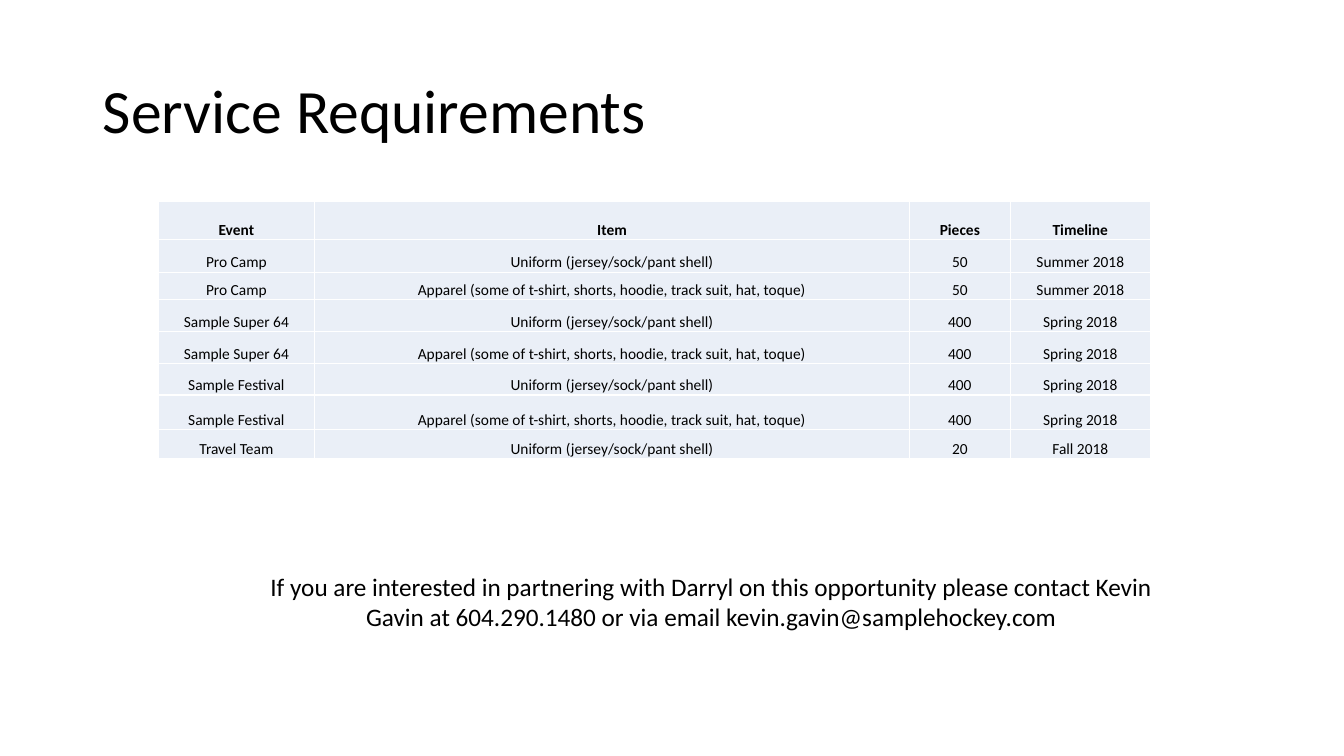
from lxml import etree
from pptx import Presentation
from pptx.dml.color import RGBColor
from pptx.enum.text import MSO_ANCHOR, PP_ALIGN
from pptx.oxml.ns import qn
from pptx.util import Inches, Pt

LEFT, CENTER = PP_ALIGN.LEFT, PP_ALIGN.CENTER
MIDDLE, BOTTOM = MSO_ANCHOR.MIDDLE, MSO_ANCHOR.BOTTOM

BLACK = RGBColor(0x00, 0x00, 0x00)
WHITE = RGBColor(0xFF, 0xFF, 0xFF)
PALE_BLUE = RGBColor(0xEA, 0xEF, 0xF7)
FONT = "Calibri"
TITLE_ONLY_LAYOUT = 5

COLUMN_WIDTHS = (1.55, 5.9, 1, 1.39)
ROW_HEIGHTS = (0.38, 0.32, 0.27, 0.32, 0.32, 0.31, 0.34, 0.29)
UNIFORM = "Uniform (jersey/sock/pant shell)"
APPAREL = "Apparel (some of t-shirt, shorts, hoodie, track suit, hat, toque)"
REQUIREMENTS = (
    ("Event", "Item", "Pieces", "Timeline"),
    ("Pro Camp", UNIFORM, "50", "Summer 2018"),
    ("Pro Camp", APPAREL, "50", "Summer 2018"),
    ("Sample Super 64", UNIFORM, "400", "Spring 2018"),
    ("Sample Super 64", APPAREL, "400", "Spring 2018"),
    ("Sample Festival", UNIFORM, "400", "Spring 2018"),
    ("Sample Festival", APPAREL, "400", "Spring 2018"),
    ("Travel Team", UNIFORM, "20", "Fall 2018"),
)
CONTACT = ("If you are interested in partnering with Darryl on this opportunity "
           "please contact Kevin Gavin at 604.290.1480 or via email "
           "kevin.gavin@samplehockey.com")


def write_text(text_frame, text, size, bold=False, align=CENTER, spacing=None):
    paragraph = text_frame.paragraphs[0]
    paragraph.alignment = align
    paragraph.line_spacing = spacing
    run = paragraph.add_run()
    run.text = text
    run.font.name = FONT
    run.font.size = Pt(size)
    run.font.bold = bold
    run.font.color.rgb = BLACK


def add_title(slide, text, left, top, width, height):
    title = slide.shapes.title
    title.left, title.top = Inches(left), Inches(top)
    title.width, title.height = Inches(width), Inches(height)
    title.text_frame.vertical_anchor = MIDDLE
    write_text(title.text_frame, text, 44, align=LEFT, spacing=0.9)


def set_borders(cell, color, width):
    properties = cell._tc.get_or_add_tcPr()
    for position, side in enumerate(("a:lnL", "a:lnR", "a:lnT", "a:lnB")):
        line = etree.Element(qn(side), w=str(Pt(width)))
        fill = etree.SubElement(line, qn("a:solidFill"))
        etree.SubElement(fill, qn("a:srgbClr"), val=str(color))
        properties.insert(position, line)


def format_cell(cell, text, bold):
    cell.fill.solid()
    cell.fill.fore_color.rgb = PALE_BLUE
    cell.vertical_anchor = BOTTOM
    cell.margin_left = cell.margin_right = cell.margin_top = Inches(0.01)
    cell.margin_bottom = 0
    write_text(cell.text_frame, text, 11, bold=bold)
    set_borders(cell, WHITE, 1)


def add_table(slide, rows, left, top):
    table = slide.shapes.add_table(
        len(rows), len(COLUMN_WIDTHS), Inches(left), Inches(top),
        Inches(sum(COLUMN_WIDTHS)), Inches(sum(ROW_HEIGHTS))).table
    for column, width in zip(table.columns, COLUMN_WIDTHS):
        column.width = Inches(width)
    for row_index, (texts, height) in enumerate(zip(rows, ROW_HEIGHTS)):
        table.rows[row_index].height = Inches(height)
        for column_index, text in enumerate(texts):
            format_cell(table.cell(row_index, column_index), text, row_index == 0)


def add_text_box(slide, text, left, top, width, height):
    box = slide.shapes.add_textbox(
        Inches(left), Inches(top), Inches(width), Inches(height))
    box.text_frame.word_wrap = True
    write_text(box.text_frame, text, 18)


def main():
    presentation = Presentation()
    presentation.slide_width = Inches(13.33)
    presentation.slide_height = Inches(7.5)
    layout = presentation.slide_layouts[TITLE_ONLY_LAYOUT]
    slide = presentation.slides.add_slide(layout)

    # Heading, requirements table and contact line
    add_title(slide, "Service Requirements", 0.92, 0.4, 11.5, 1.45)
    add_table(slide, REQUIREMENTS, 1.57, 2)
    add_text_box(slide, CONTACT, 2.43, 5.62, 9.25, 0.71)

    presentation.save("out.pptx")


if __name__ == "__main__":
    main()
